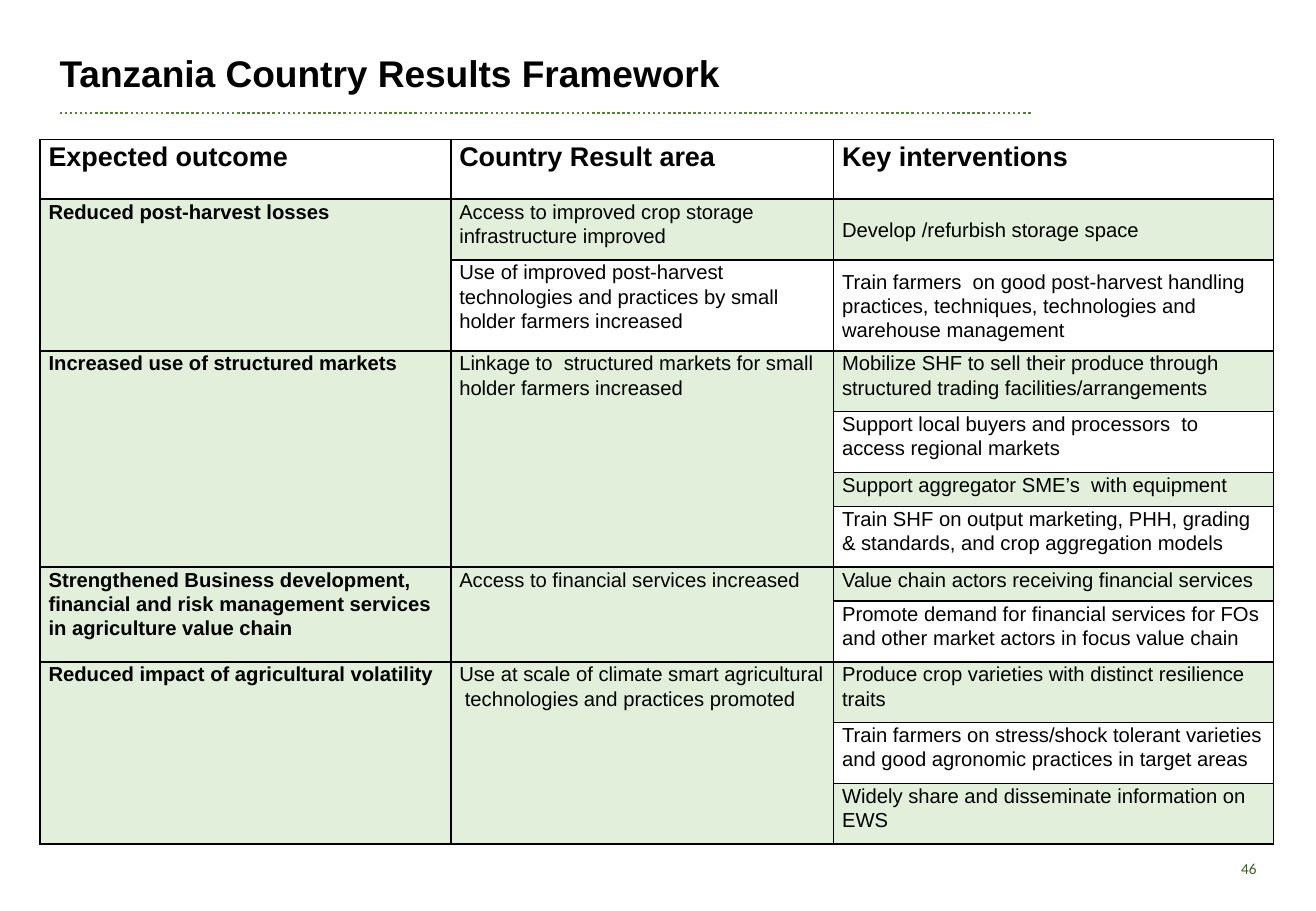
from lxml import etree
from pptx import Presentation
from pptx import util as u
from pptx.dml.color import RGBColor
from pptx.enum import dml, shapes, text
from pptx.oxml.ns import qn

WIDTH, HEIGHT = 10.83, 7.5
BLACK, WHITE, PALE_GREEN = "000000", "FFFFFF", "E2EFDA"
LINE_GREEN, NUMBER_GREEN = "548135", "3F5F1F"
LEFT_MARGIN = 0.49

COLUMNS = [3.38, 3.15, 3.62]
ONE_LINE, TWO_LINES, THREE_LINES = 0.28, 0.5, 0.75
HEADINGS = ["Expected outcome", "Country Result area", "Key interventions"]
# Each outcome holds result areas; each result area holds (intervention, row height).
OUTCOMES = [
    ("Reduced post-harvest losses", [
        ("Access to improved crop storage infrastructure improved", [
            ("Develop /refurbish storage space", TWO_LINES)]),
        ("Use of improved post-harvest technologies and practices by small holder farmers increased", [
            ("Train farmers  on good post-harvest handling practices, techniques, "
             "technologies and warehouse management", THREE_LINES)])]),
    ("Increased use of structured markets", [
        ("Linkage to  structured markets for small holder farmers increased", [
            ("Mobilize SHF to sell their produce through structured trading facilities/arrangements", TWO_LINES),
            ("Support local buyers and processors  to access regional markets", TWO_LINES),
            ("Support aggregator SME’s  with equipment", ONE_LINE),
            ("Train SHF on output marketing, PHH, grading & standards, and crop aggregation models", TWO_LINES)])]),
    ("Strengthened Business development, financial and risk management services in agriculture value chain", [
        ("Access to financial services increased", [
            ("Value chain actors receiving financial services", ONE_LINE),
            ("Promote demand for financial services for FOs and other market actors in focus value chain", TWO_LINES)])]),
    ("Reduced impact of agricultural volatility", [
        ("Use at scale of climate smart agricultural  technologies and practices promoted", [
            ("Produce crop varieties with distinct resilience traits", TWO_LINES),
            ("Train farmers on stress/shock tolerant varieties and good agronomic practices in target areas", TWO_LINES),
            ("Widely share and disseminate information on EWS", TWO_LINES)])]),
]


def color(value):
    return RGBColor.from_string(value)


def write(frame, content, size, bold=False, font="Arial", ink=BLACK, spacing=1.0, after=0):
    frame.word_wrap = True
    frame.text = content
    paragraph = frame.paragraphs[0]
    paragraph.line_spacing = spacing
    paragraph.space_after = u.Pt(after)
    for run in paragraph.runs:
        run.font.name, run.font.size, run.font.bold = font, u.Pt(size), bold
        run.font.color.rgb = color(ink)
    return paragraph


def add_text(slide, content, left, top, width, height, anchor, **style):
    box = slide.shapes.add_textbox(*map(u.Inches, (left, top, width, height)))
    frame = box.text_frame
    frame.vertical_anchor = anchor
    return frame, write(frame, content, **style)


def add_dotted_rule(slide, left, right, y):
    rule = slide.shapes.add_connector(
        shapes.MSO_CONNECTOR.STRAIGHT, *map(u.Inches, (left, y, right, y)))
    rule.line.color.rgb = color(LINE_GREEN)
    rule.line.width = u.Pt(1.5)
    rule.line.dash_style = dml.MSO_LINE.ROUND_DOT
    etree.SubElement(rule._element.spPr, qn("a:effectLst"))


def add_borders(cell):
    properties = cell._tc.get_or_add_tcPr()
    for side in ("lnL", "lnR", "lnT", "lnB"):
        line = etree.SubElement(properties, qn(f"a:{side}"), w=str(u.Pt(1)))
        fill = etree.SubElement(line, qn("a:solidFill"))
        etree.SubElement(fill, qn("a:srgbClr"), val=BLACK)


def prepare_cell(cell):
    """Give a cell its borders, white fill and margins."""
    add_borders(cell)
    cell.fill.solid()
    cell.fill.fore_color.rgb = color(WHITE)
    cell.margin_left = cell.margin_right = u.Inches(0.07)
    cell.margin_top = cell.margin_bottom = 0


def fill_cell(table, row, column, content, span=1, green=True, size=12, bold=False, after=8):
    cell = table.cell(row, column)
    if span > 1:
        cell.merge(table.cell(row + span - 1, column))
    cell.fill.fore_color.rgb = color(PALE_GREEN if green else WHITE)
    write(cell.text_frame, content, size, bold, spacing=1.07, after=after)
    return cell


def add_framework_table(slide, left, top):
    heights = [0.49] + [height for _, areas in OUTCOMES
                        for _, interventions in areas for _, height in interventions]
    frame = slide.shapes.add_table(
        len(heights), len(COLUMNS),
        *map(u.Inches, (left, top, sum(COLUMNS), sum(heights))))
    table = frame.table
    table.first_row = table.horz_banding = False
    for column, width in zip(table.columns, COLUMNS):
        column.width = u.Inches(width)
    for row, height in zip(table.rows, heights):
        row.height = u.Inches(height)
    for cell in table.iter_cells():
        prepare_cell(cell)

    for column, heading in enumerate(HEADINGS):
        fill_cell(table, 0, column, heading, green=False, size=16, bold=True, after=0)
    row = 1
    for outcome, areas in OUTCOMES:
        first = row
        for area, interventions in areas:
            fill_cell(table, row, 1, area, len(interventions), green=row == first)
            for intervention, _ in interventions:
                cell = fill_cell(table, row, 2, intervention, green=(row - first) % 2 == 0)
                if len(interventions) == 1:
                    cell.vertical_anchor = text.MSO_ANCHOR.MIDDLE
                row += 1
        fill_cell(table, first, 0, outcome, row - first, bold=True)


def main():
    presentation = Presentation()
    presentation.slide_width, presentation.slide_height = u.Inches(WIDTH), u.Inches(HEIGHT)
    slide = presentation.slides.add_slide(presentation.slide_layouts[6])

    frame, _ = add_text(slide, "Tanzania Country Results Framework",
                        LEFT_MARGIN, 0.15, 7.92, 0.64, text.MSO_ANCHOR.BOTTOM,
                        size=22, bold=True, spacing=0.9)
    frame.margin_left = frame.margin_right = frame.margin_top = frame.margin_bottom = 0
    add_dotted_rule(slide, LEFT_MARGIN, LEFT_MARGIN + 8, 0.93)
    add_framework_table(slide, 0.33, 1.15)
    _, number = add_text(slide, "46", 7.91, 6.95, 2.53, 0.4, text.MSO_ANCHOR.MIDDLE,
                         size=9, font="Calibri", ink=NUMBER_GREEN)
    number.alignment = text.PP_ALIGN.RIGHT
    presentation.save("out.pptx")


if __name__ == "__main__":
    main()
